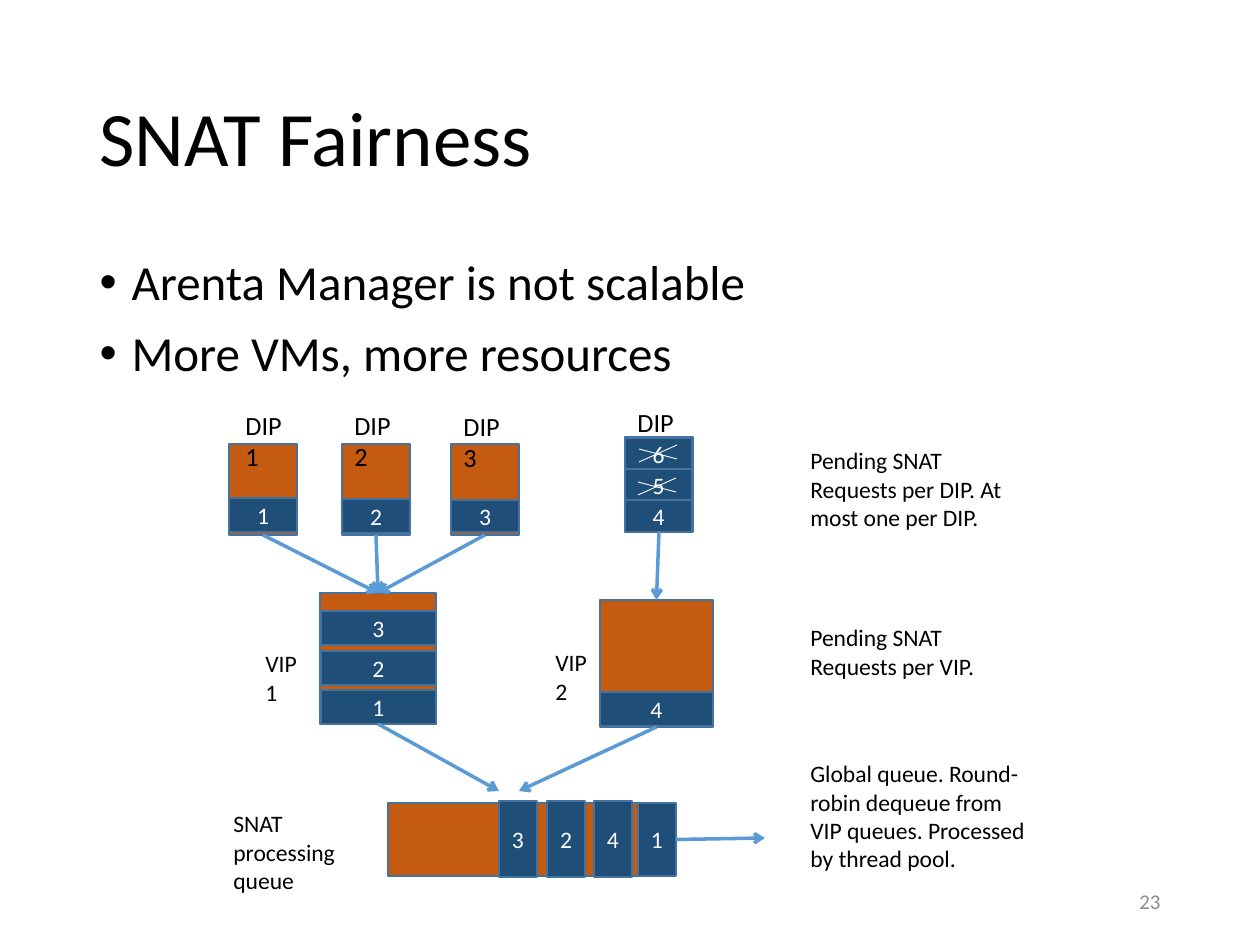
from lxml.etree import SubElement
from pptx import Presentation
from pptx.dml.color import RGBColor
from pptx.enum.shapes import MSO_CONNECTOR as Connector, MSO_SHAPE as Shape
from pptx.enum.text import MSO_ANCHOR as Anchor, MSO_AUTO_SIZE as AutoSize, PP_ALIGN as Align
from pptx.oxml.ns import qn
from pptx.util import Pt

EMU_PER_PX = 914400 / 126
BLACK = RGBColor(0x00, 0x00, 0x00)
WHITE = RGBColor(0xFF, 0xFF, 0xFF)
GRAY = RGBColor(0x8C, 0x8C, 0x8C)
ORANGE = RGBColor(0xC5, 0x5A, 0x11)
NAVY = RGBColor(0x1F, 0x4E, 0x79)
PALE_BLUE = RGBColor(0xBD, 0xD7, 0xEE)
OUTLINE = RGBColor(0x43, 0x73, 0x9E)
ARROW = RGBColor(0x5B, 0x9B, 0xD5)
TOP, BOTTOM, RIGHT = 0, 2, 3


def px(*lengths):
    return [round(length * EMU_PER_PX) for length in lengths]


class SlideBuilder:
    font_name = "Calibri"

    def __init__(self, slide):
        self.slide = slide

    def style(self, paragraph, size, color=BLACK, align=Align.LEFT):
        paragraph.alignment = align
        paragraph.font.name = self.font_name
        paragraph.font.size = Pt(size)
        paragraph.font.color.rgb = color

    def place(self, shape, left, top, width, height):
        shape.left, shape.top, shape.width, shape.height = px(left, top, width, height)

    def title(self, text, *box):
        shape = self.slide.shapes.title
        self.place(shape, *box)
        frame = shape.text_frame
        frame.text = text
        frame.vertical_anchor = Anchor.MIDDLE
        frame.paragraphs[0].line_spacing = 0.9
        self.style(frame.paragraphs[0], 44)

    def bullets(self, lines, *box):
        shape = self.slide.placeholders[1]
        self.place(shape, *box)
        frame = shape.text_frame
        frame.text = "\n".join(lines)
        frame.auto_size = AutoSize.NONE
        indent = px(32)[0]
        for paragraph in frame.paragraphs:
            self.style(paragraph, 28)
            paragraph.line_spacing = 0.9
            paragraph.space_before = Pt(10)
            properties = paragraph._p.get_or_add_pPr()
            properties.set("marL", str(indent))
            properties.set("indent", str(-indent))

    def label(self, text, left, top, width, height, size=13.5, color=BLACK,
              align=Align.LEFT, anchor=Anchor.TOP):
        frame = self.slide.shapes.add_textbox(*px(left, top, width, height)).text_frame
        frame.word_wrap = True
        frame.vertical_anchor = anchor
        frame.text = text
        self.style(frame.paragraphs[0], size, color, align)

    def box(self, left, top, width, height, fill=ORANGE):
        shape = self.slide.shapes.add_shape(Shape.RECTANGLE, *px(left, top, width, height))
        shape.shadow.inherit = False
        shape.fill.solid()
        shape.fill.fore_color.rgb = fill
        shape.line.color.rgb = OUTLINE
        shape.line.width = Pt(1)
        return shape

    def request(self, text, left, top, width, height):
        shape = self.box(left, top, width, height, NAVY)
        frame = shape.text_frame
        frame.margin_left = frame.margin_right = 0
        frame.vertical_anchor = Anchor.MIDDLE
        frame.text = text
        self.style(frame.paragraphs[0], 13.5, WHITE, Align.CENTER)
        return shape

    def line(self, start, end, color=WHITE, width=0.5):
        connector = self.slide.shapes.add_connector(Connector.STRAIGHT, *px(*start, *end))
        connector.line.color.rgb = color
        connector.line.width = Pt(width)
        SubElement(connector._element.spPr, qn("a:effectLst"))
        return connector

    def arrow(self, source, side, end=(0, 0), target=None):
        connector = self.line((0, 0), end, ARROW, 2)
        connector.begin_connect(source, side)
        if target is not None:
            connector.end_connect(target, TOP)
        SubElement(connector.line._get_or_add_ln(), qn("a:tailEnd"), type="arrow")


def main():
    presentation = Presentation()
    presentation.slide_width, presentation.slide_height = px(1260, 945)
    builder = SlideBuilder(presentation.slides.add_slide(presentation.slide_layouts[1]))

    builder.title("SNAT Fairness", 87, 50, 1086, 183)
    builder.bullets(["Arenta Manager is not scalable", "More VMs, more resources"],
                    87, 252, 1086, 600)
    builder.label("23", 890, 876, 283, 50, 12, GRAY, Align.RIGHT, Anchor.MIDDLE)

    vip1 = builder.box(320, 593, 116, 131)
    for text, top in (("3", 611), ("2", 651), ("1", 690)):
        builder.request(text, 321, top, 115, 34)
    vip2 = builder.box(600, 600, 113, 127)
    builder.request("4", 600, 692, 113, 34)

    dips = (("1", 229, 233, 403, 498, 34), ("2", 342, 342, 403, 499, 34),
            ("3", 451, 451, 404, 500, 32))
    for number, left, label_left, label_top, top, height in dips:
        dip = builder.box(left, 444, 68, 91)
        builder.label("DIP" + number, label_left, label_top, 68, 39, 15)
        builder.request(number, left, top, 68, height)
        builder.arrow(dip, BOTTOM, target=vip1)

    builder.label("DIP4", 625, 400, 68, 39, 15)
    dip4 = builder.box(625, 437, 68, 95, PALE_BLUE)
    for row, text in enumerate("654"):
        builder.request(text, 625, 438 + 31 * row, 67, 32)
    builder.arrow(dip4, BOTTOM, target=vip2)
    for left, top in ((639, 445), (638, 478)):
        builder.line((left, top + 4), (left + 38, top + 14))
        builder.line((left, top + 17), (left + 38, top))

    builder.box(388, 803, 286, 73)
    for text, left in (("3", 499), ("2", 547), ("4", 594)):
        builder.request(text, left, 801, 38, 76)
    queue_head = builder.request("1", 638, 803, 38, 73)
    builder.arrow(vip1, BOTTOM, (499, 791))
    builder.arrow(vip2, BOTTOM, (519, 791))
    builder.arrow(queue_head, RIGHT, (765, 838))

    builder.label("VIP1", 253, 643, 68, 36)
    builder.label("VIP2", 543, 642, 68, 36)
    builder.label("SNAT processing queue", 221, 803, 145, 98)
    notes = (("Pending SNAT Requests per DIP. At most one per DIP.", 440, 98),
             ("Pending SNAT Requests per VIP.", 617, 70),
             ("Global queue. Round-robin dequeue from VIP queues. Processed by thread pool.",
              753, 127))
    for text, top, height in notes:
        builder.label(text, 798, top, 241, height)

    presentation.save("out.pptx")


if __name__ == "__main__":
    main()
